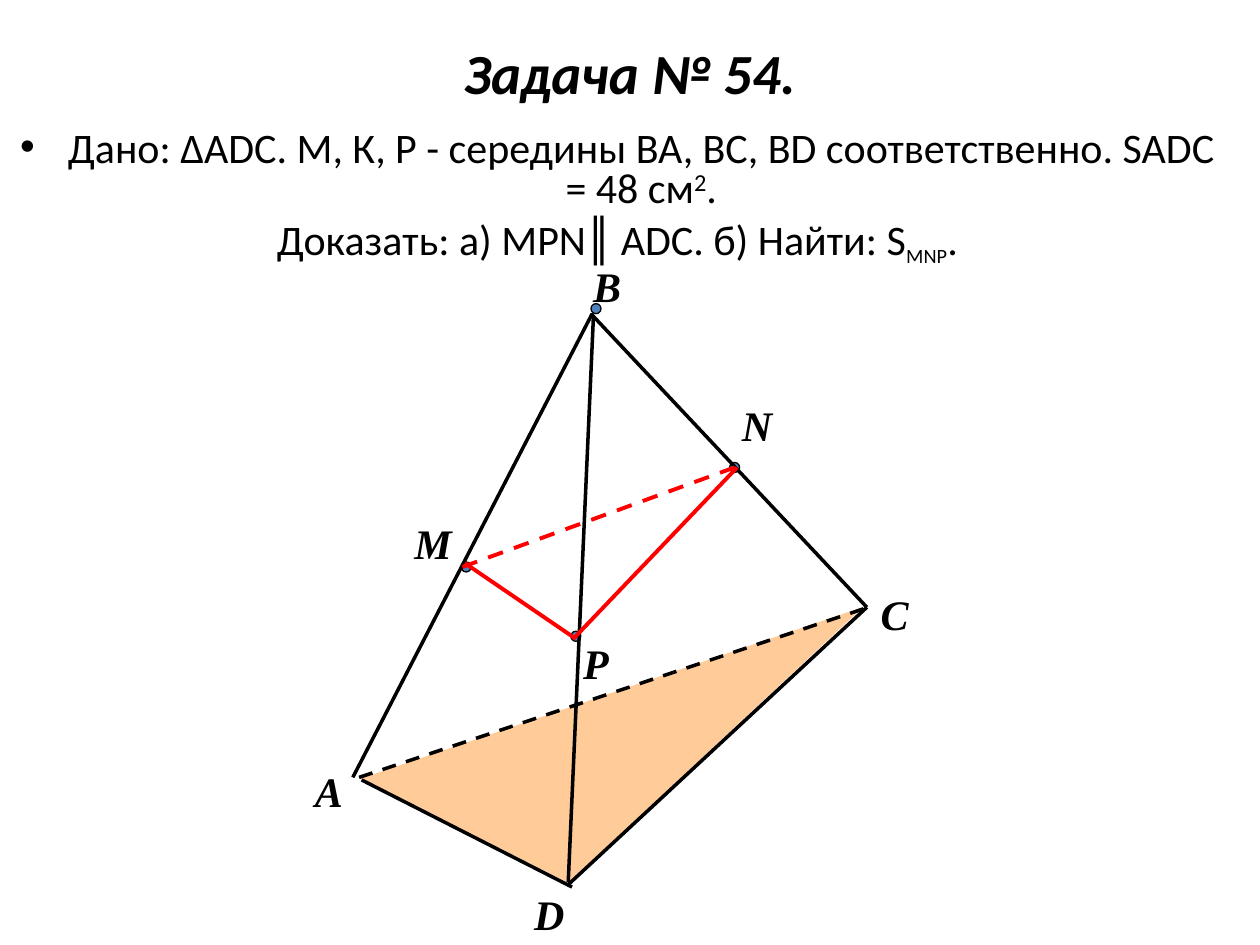
from typing import NamedTuple

from lxml import etree
from pptx import Presentation
from pptx.dml.color import RGBColor
from pptx.enum.dml import MSO_LINE
from pptx.enum.shapes import MSO_CONNECTOR, MSO_SHAPE
from pptx.enum.text import MSO_ANCHOR, MSO_AUTO_SIZE, PP_ALIGN
from pptx.oxml.ns import qn
from pptx.util import Inches, Pt

STRAIGHT = MSO_CONNECTOR.STRAIGHT
OVAL = MSO_SHAPE.OVAL
DASH = MSO_LINE.DASH
CENTER = PP_ALIGN.CENTER
MIDDLE = MSO_ANCHOR.MIDDLE
NO_FIT = MSO_AUTO_SIZE.NONE
FIT_SHAPE = MSO_AUTO_SIZE.SHAPE_TO_FIT_TEXT

BLACK, RED, BLUE, PEACH = "000000", "FF0000", "4F81BD", "FFCC99"
DOT = 0.08


class Edge(NamedTuple):
    start: tuple[float, float]
    end: tuple[float, float]
    dashed: bool = False


class Label(NamedTuple):
    letter: str
    left: float
    top: float
    width: float = 0.42


class Piece(NamedTuple):
    text: str
    size: float = 24
    baseline: int = 0


BASE = [(2.88, 6.18), (4.51, 7), (6.83, 4.83)]
POINTS = [(4.69, 2.41), (3.66, 4.46), (5.79, 3.67), (4.53, 5.01)]
PYRAMID = [
    Edge((2.85, 6.17), (6.86, 4.83), dashed=True),
    Edge((4.5, 7.03), (6.88, 4.82)),
    Edge((6.88, 4.82), (4.69, 2.49)),
    Edge((4.51, 7), (4.71, 2.51)),
    Edge((2.8, 6.17), (4.7, 2.49)),
    Edge((2.87, 6.19), (4.54, 7.04)),
]
SECTION = [
    Edge((3.69, 4.47), (4.57, 5.07)),
    Edge((3.67, 4.5), (5.83, 3.71), dashed=True),
    Edge((4.56, 5.06), (5.85, 3.71)),
]
LABELS = [
    Label("М", 3.19, 4.06, 0.5),
    Label("Р", 4.53, 5.01, 0.4),
    Label("N", 5.79, 3.12),
    Label("А", 2.4, 6.03),
    Label("В", 4.61, 2.02),
    Label("D", 4.14, 7),
    Label("C", 6.89, 4.62),
]
GIVEN = [
    Piece("Дано: ΔАDС. М, К, Р - середины ВА, ВС, ВD соответственно. SADC = 48 см"),
    Piece("2", baseline=30),
    Piece("."),
]
TO_PROVE = [
    Piece("Доказать: а) МРN║ АDС. б) Найти: S"),
    Piece("MNP", size=20, baseline=-25),
    Piece("."),
]


def color(value: str) -> RGBColor:
    return RGBColor.from_string(value)


def place(shape, left: float, top: float, width: float, height: float) -> None:
    shape.left, shape.top = Inches(left), Inches(top)
    shape.width, shape.height = Inches(width), Inches(height)


def add_run(paragraph, text: str, size: float, font: str, emphasis: bool = False):
    run = paragraph.add_run()
    run.text = text
    run.font.size = Pt(size)
    run.font.name = font
    run.font.bold = run.font.italic = emphasis
    run.font.color.rgb = color(BLACK)
    return run


def write_statement(paragraph, pieces: list[Piece], bullet: bool) -> None:
    paragraph.alignment = CENTER
    paragraph.line_spacing = 0.8
    properties = paragraph._p.get_or_add_pPr()
    properties.set("marL", str(Inches(0.38)))
    properties.set("indent", str(Inches(-0.38)))
    if bullet:
        etree.SubElement(properties, qn("a:buChar")).set("char", "•")
    else:
        etree.SubElement(properties, qn("a:buNone"))
    for piece in pieces:
        run = add_run(paragraph, piece.text, piece.size, "Calibri")
        if piece.baseline:
            run._r.get_or_add_rPr().set("baseline", str(piece.baseline * 1000))


def paint(shape, fill: str, line: str) -> None:
    shape.shadow.inherit = False
    shape.fill.solid()
    shape.fill.fore_color.rgb = color(fill)
    shape.line.color.rgb = color(line)
    shape.line.width = Pt(0.75)


def draw_edge(shapes, edge: Edge, stroke: str, weight: float) -> None:
    ends = [Inches(value) for value in edge.start + edge.end]
    segment = shapes.add_connector(STRAIGHT, *ends)
    segment.line.color.rgb = color(stroke)
    segment.line.width = Pt(weight)
    if edge.dashed:
        segment.line.dash_style = DASH
    etree.SubElement(segment._element.spPr, qn("a:effectLst"))


def draw_label(shapes, label: Label) -> None:
    box = shapes.add_textbox(
        Inches(label.left), Inches(label.top), Inches(label.width), Inches(0.5)
    )
    box.text_frame.word_wrap = False
    box.text_frame.auto_size = FIT_SHAPE
    add_run(box.text_frame.paragraphs[0], label.letter, 24, "Times New Roman", True)


def main() -> None:
    """Build the slide with the tetrahedron problem and its diagram."""
    deck = Presentation()
    deck.slide_width, deck.slide_height = Inches(10), Inches(7.5)
    slide = deck.slides.add_slide(deck.slide_layouts[1])
    shapes = slide.shapes

    heading = shapes.title
    place(heading, 0.5, 0.3, 9, 0.54)
    heading.text_frame.auto_size = NO_FIT
    heading.text_frame.vertical_anchor = MIDDLE
    heading_line = heading.text_frame.paragraphs[0]
    heading_line.alignment = CENTER
    add_run(heading_line, "Задача № 54.", 32.4, "Calibri", True)

    problem = slide.placeholders[1]
    place(problem, 0, 0.99, 9.8, 1.18)
    problem.text_frame.auto_size = NO_FIT
    write_statement(problem.text_frame.paragraphs[0], GIVEN, bullet=True)
    write_statement(problem.text_frame.add_paragraph(), TO_PROVE, bullet=False)

    corners = [(Inches(x), Inches(y)) for x, y in BASE]
    outline = shapes.build_freeform(*corners[0])
    outline.add_line_segments(corners[1:], close=True)
    paint(outline.convert_to_shape(), PEACH, PEACH)

    for x, y in POINTS:
        point = shapes.add_shape(OVAL, Inches(x), Inches(y), Inches(DOT), Inches(DOT))
        paint(point, BLUE, BLACK)
    for edge in PYRAMID:
        draw_edge(shapes, edge, BLACK, 2)
    for label in LABELS:
        draw_label(shapes, label)
    for edge in SECTION:
        draw_edge(shapes, edge, RED, 2.25)

    deck.save("out.pptx")


if __name__ == "__main__":
    main()
